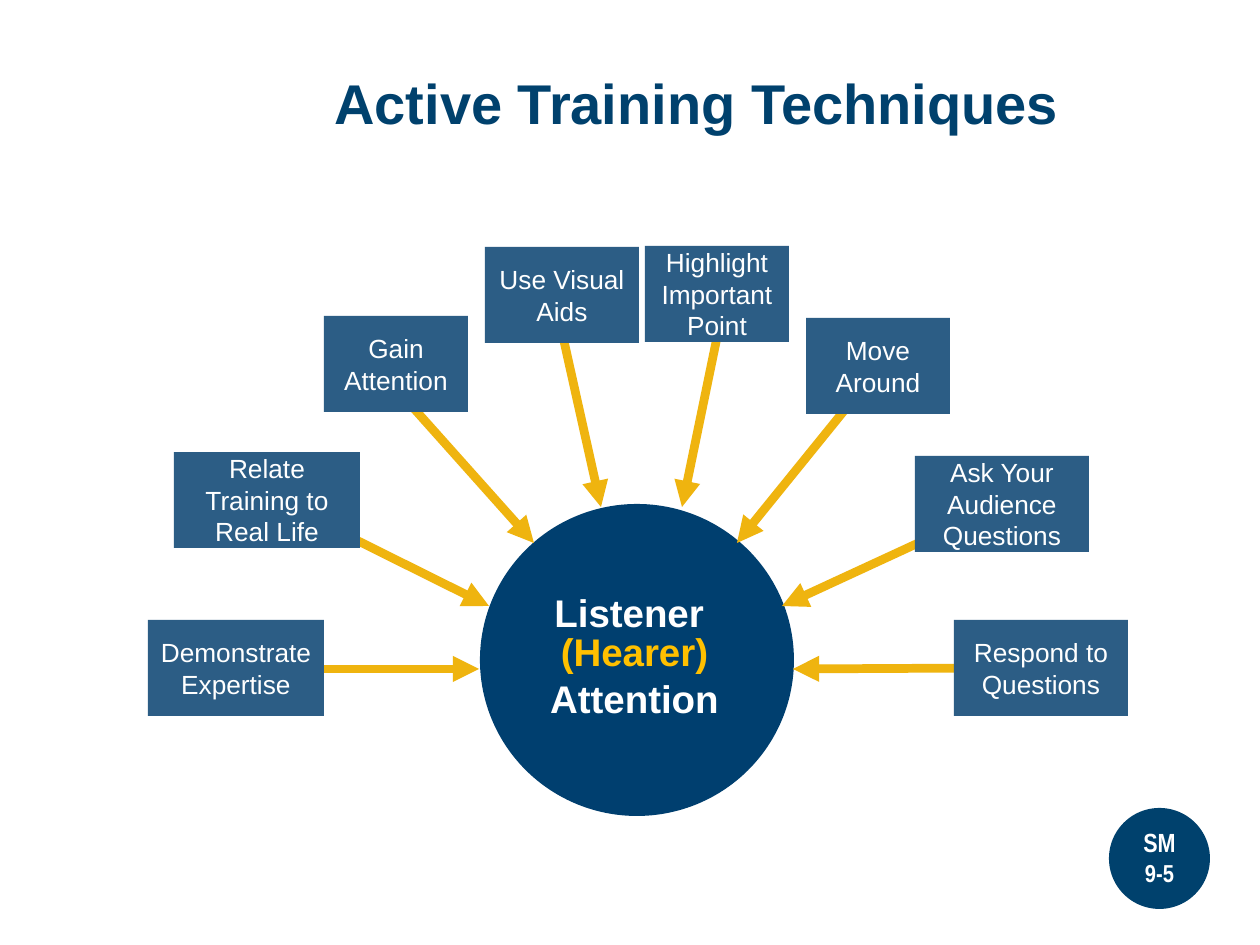
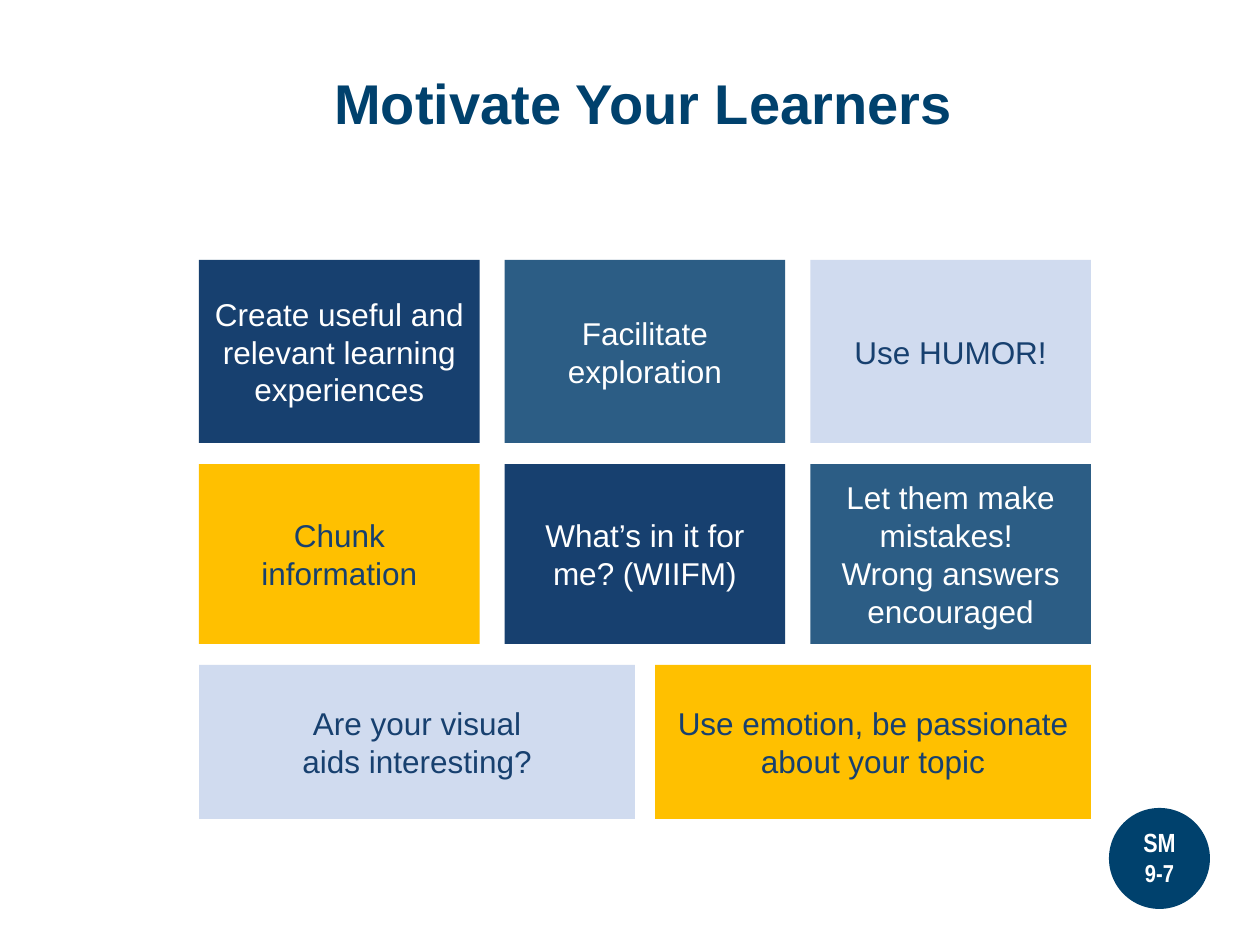
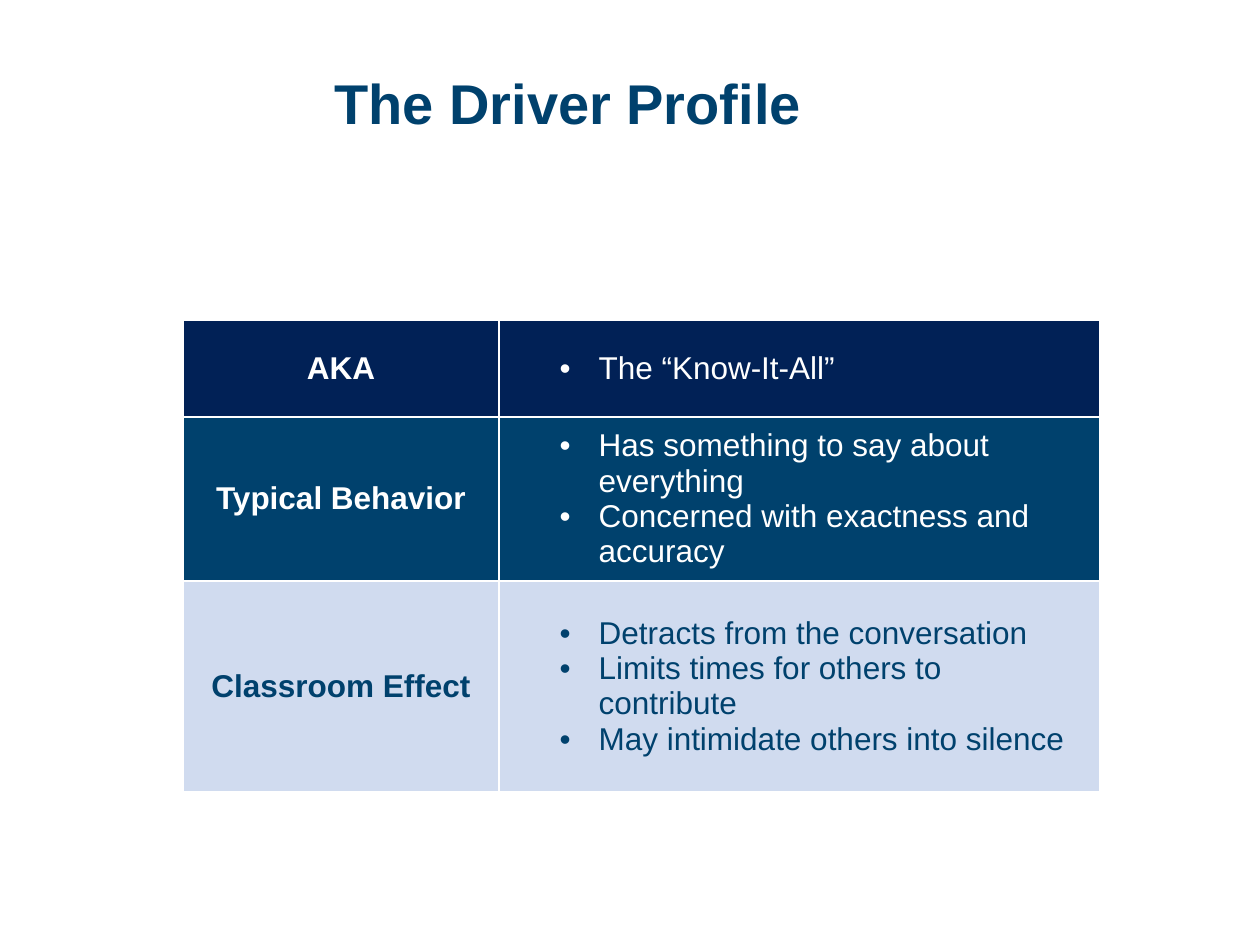
from lxml import etree
from pptx import Presentation
from pptx.dml.color import RGBColor
from pptx.enum import shapes, text
from pptx.oxml import ns
from pptx import util as u

EMU_PER_PX = 914400 / 126

TITLE_BLUE = RGBColor(0x00, 0x41, 0x6D)
HUB_BLUE = RGBColor(0x00, 0x3F, 0x6F)
STEEL = RGBColor(0x2C, 0x5D, 0x85)
NAVY = RGBColor(0x17, 0x40, 0x6F)
MIDNIGHT = RGBColor(0x01, 0x21, 0x56)
PALE = RGBColor(0xD0, 0xDB, 0xEF)
AMBER = RGBColor(0xFF, 0xC0, 0x00)
ARROW_GOLD = RGBColor(0xEF, 0xB4, 0x0F)
WHITE = RGBColor(0xFF, 0xFF, 0xFF)

TITLE_BOX = (322, 15, 895, 183)
BADGE_BOX = (1109, 808, 101, 101)
DIAGRAM_BOX = (148, 246, 980, 570)
TILES_BOX = (199, 260, 892, 559)
TABLE_BOX = (183, 320, 917, 462)

TECHNIQUE_HEIGHT = 96
TECHNIQUES = [
    ("Demonstrate Expertise", (0, 374), 176, (144, 423), (331, 423)),
    ("Relate\nTraining to\nReal Life", (26, 206), 186, (186, 283), (341, 360)),
    ("Gain Attention", (176, 70), 144, (253, 148), (386, 297)),
    ("Use Visual Aids", (337, 1), 154, (416, 95), (453, 261)),
    ("Highlight\nImportant Point", (497, 0), 144, (573, 72), (534, 261)),
    ("Move Around", (658, 72), 144, (704, 155), (589, 297)),
    ("Ask Your Audience Questions", (767, 210), 174, (792, 287), (634, 360)),
    ("Respond to Questions", (806, 374), 174, (837, 422), (645, 423)),
]

TILE_ROW_GAP = 21
TILE_ROWS = [
    (183, 25, [("Create useful and relevant learning experiences", NAVY),
               ("Facilitate exploration", STEEL),
               ("Use HUMOR!", PALE)]),
    (180, 25, [("Chunk information", AMBER),
               ("What’s in it for me? (WIIFM)", NAVY),
               ("Let them make mistakes! \vWrong answers encouraged", STEEL)]),
    (154, 20, [("Are your visual\naids interesting?", PALE),
               ("Use emotion, be passionate about your topic", AMBER)]),
]

PROFILE_COLUMNS = (316, 601)
PROFILE_ROWS = [
    (97, MIDNIGHT, WHITE, "AKA", "The “Know-It-All”"),
    (154, TITLE_BLUE, WHITE, "Typical Behavior",
     "Has something to say about everything\nConcerned with exactness and accuracy"),
    (211, PALE, TITLE_BLUE, "Classroom Effect",
     "Detracts from the conversation\nLimits times for others to contribute\n"
     "May intimidate others into silence"),
]


def px(length):
    return u.Emu(round(length * EMU_PER_PX))


def emu(lengths):
    return [px(length) for length in lengths]


def style(paragraph, size, color, bold=False, align=text.PP_ALIGN.CENTER, name="Arial"):
    paragraph.alignment = align
    font = paragraph.font
    font.name, font.size, font.bold = name, u.Pt(size), bold
    font.color.rgb = color


def add_text_box(slide, box):
    frame = slide.shapes.add_textbox(*emu(box)).text_frame
    frame.word_wrap = True
    return frame


def add_filled(slide, kind, box, fill):
    shape = slide.shapes.add_shape(kind, *emu(box))
    shape.shadow.inherit = False
    shape.fill.solid()
    shape.fill.fore_color.rgb = fill
    shape.line.fill.background()
    return shape


def add_label_box(slide, box, label, fill, size, side_inset):
    frame = add_filled(slide, shapes.MSO_SHAPE.RECTANGLE, box, fill).text_frame
    frame.word_wrap = True
    frame.vertical_anchor = text.MSO_ANCHOR.MIDDLE
    frame.margin_left = frame.margin_right = px(side_inset)
    frame.margin_top = frame.margin_bottom = 0
    frame.text = label
    for paragraph in frame.paragraphs:
        style(paragraph, size, NAVY if fill in (PALE, AMBER) else WHITE)


def add_arrow(slide, start, end):
    connector = slide.shapes.add_connector(
        shapes.MSO_CONNECTOR.STRAIGHT, *emu((*start, *end)))
    connector.line.color.rgb = ARROW_GOLD
    connector.line.width = u.Pt(5)
    etree.SubElement(connector.line._get_or_add_ln(), ns.qn("a:tailEnd"), type="triangle")
    etree.SubElement(connector._element.spPr, ns.qn("a:effectLst"))


def add_title(slide, box, title):
    frame = add_text_box(slide, box)
    frame.vertical_anchor = text.MSO_ANCHOR.MIDDLE
    frame.text = title
    paragraph = frame.paragraphs[0]
    paragraph.line_spacing = 0.9
    style(paragraph, 32, TITLE_BLUE, True, text.PP_ALIGN.LEFT)


def add_badge(slide, box, page):
    left, top, width, height = box
    add_filled(slide, shapes.MSO_SHAPE.OVAL, box, TITLE_BLUE)
    frame = add_text_box(slide, (left, top + 12, width, height - 27))
    paragraph = frame.paragraphs[0]
    style(paragraph, 15, WHITE, True, name="Arial Narrow")
    paragraph.add_run().text = "SM"
    paragraph.add_line_break()
    page_run = paragraph.add_run()
    page_run.text = page
    page_run.font.size = u.Pt(14)


def add_hub(slide, box):
    left, top, width, height = box
    add_filled(slide, shapes.MSO_SHAPE.OVAL, box, HUB_BLUE)
    frame = add_text_box(slide, (left - 44, top + 86, width + 83, 141))
    listener = frame.paragraphs[0]
    attention = frame.add_paragraph()
    for paragraph in (listener, attention):
        style(paragraph, 22, WHITE, True)
        paragraph.line_spacing = 0.85
    attention.space_before = u.Pt(4.4)
    listener.add_run().text = "Listener "
    listener.add_line_break()
    hearer = listener.add_run()
    hearer.text = "(Hearer)"
    hearer.font.color.rgb = AMBER
    attention.add_run().text = "Attention"


def add_technique_diagram(slide, box):
    left, top = box[:2]

    def place(point):
        return left + point[0], top + point[1]

    add_hub(slide, (*place((332, 258)), 314, 312))
    for _, _, _, start, end in TECHNIQUES:
        add_arrow(slide, place(start), place(end))
    for label, corner, width, _, _ in TECHNIQUES:
        add_label_box(slide, (*place(corner), width, TECHNIQUE_HEIGHT), label, STEEL, 15, 10)


def add_tiles(slide, box):
    left, top, total_width, _ = box
    for height, gap, tiles in TILE_ROWS:
        width = (total_width - gap * (len(tiles) - 1)) / len(tiles)
        for column, (label, fill) in enumerate(tiles):
            tile_box = (left + column * (width + gap), top, width, height)
            add_label_box(slide, tile_box, label, fill, 18, 14)
        top += height + TILE_ROW_GAP


def add_bullet(paragraph):
    properties = paragraph._p.get_or_add_pPr()
    properties.set("marL", str(px(87)))
    properties.set("indent", str(px(-39)))
    etree.SubElement(properties, ns.qn("a:buFont"), typeface="Arial")
    etree.SubElement(properties, ns.qn("a:buChar"), char="•")


def fill_cell(cell, content, fill):
    properties = cell._tc.get_or_add_tcPr()
    for side in ("lnL", "lnR", "lnT", "lnB"):
        border = etree.SubElement(properties, ns.qn(f"a:{side}"), w=str(u.Pt(1)))
        solid = etree.SubElement(border, ns.qn("a:solidFill"))
        etree.SubElement(solid, ns.qn("a:srgbClr"), val=str(WHITE))
    cell.fill.solid()
    cell.fill.fore_color.rgb = fill
    cell.vertical_anchor = text.MSO_ANCHOR.MIDDLE
    cell.text = content
    return cell.text_frame.paragraphs


def add_profile_table(slide, box):
    table = slide.shapes.add_table(
        len(PROFILE_ROWS), len(PROFILE_COLUMNS), *emu(box)).table
    table.first_row = table.horz_banding = False
    for column, width in zip(table.columns, PROFILE_COLUMNS):
        column.width = px(width)
    for row, (height, fill, color, heading, traits) in zip(table.rows, PROFILE_ROWS):
        row.height = px(height)
        for paragraph in fill_cell(row.cells[0], heading, fill):
            style(paragraph, 18, color, True)
        for paragraph in fill_cell(row.cells[1], traits, fill):
            add_bullet(paragraph)
            style(paragraph, 18, color, align=text.PP_ALIGN.LEFT)


def main():
    presentation = Presentation()
    presentation.slide_width, presentation.slide_height = px(1260), px(945)
    for title, add_content, content_box, page in (
        ("Active Training Techniques", add_technique_diagram, DIAGRAM_BOX, "9-5"),
        ("Motivate Your Learners", add_tiles, TILES_BOX, "9-7"),
        ("The Driver Profile", add_profile_table, TABLE_BOX, None),
    ):
        slide = presentation.slides.add_slide(presentation.slide_layouts[6])
        add_title(slide, TITLE_BOX, title)
        add_content(slide, content_box)
        if page:
            add_badge(slide, BADGE_BOX, page)
    presentation.save("out.pptx")


if __name__ == "__main__":
    main()
